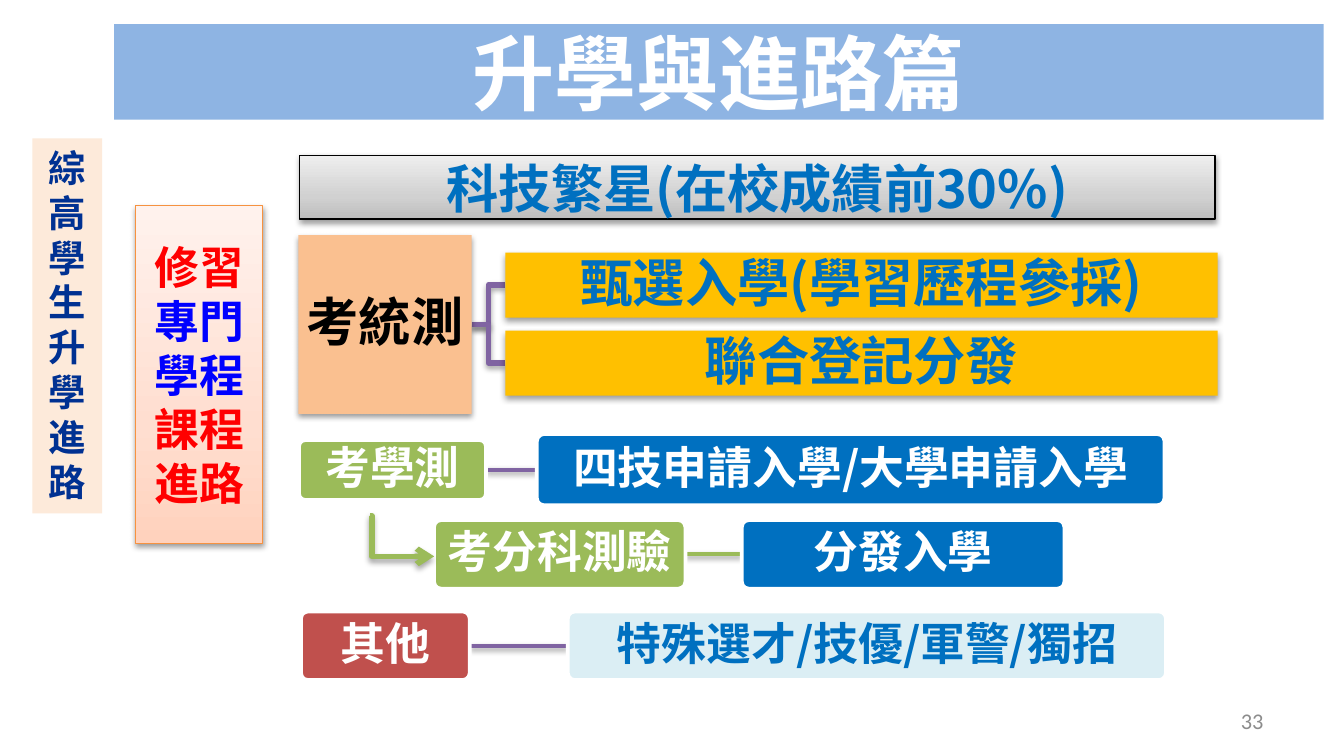
from dataclasses import dataclass

from lxml import etree
from pptx import Presentation
from pptx import util as u
from pptx.dml.color import RGBColor
from pptx.enum import shapes, text
from pptx.oxml import ns

EMU_PER_PX = 4572
FONT = "Noto Sans CJK SC"
C = {
    "white": "FFFFFF", "black": "000000", "title": "8EB4E3", "cream": "FDEADA",
    "navy": "003192", "red": "FF0000", "blue": "0000FF", "sky": "0070C0",
    "peach": "FAC090", "gold": "FFC000", "green": "9BBB59", "purple": "8064A2",
    "brick": "C0504D", "ice": "DBEEF4", "orange": "F69240", "grey": "8C8C8C",
}
PEACH_FADE = ("FFD2BD", "FFDED0", "FFF2ED")
GREY_FADE = ("BDBDBD", "D1D1D1", "EEEEEE")
FADE_STOPS = (0, 35, 100)


@dataclass(frozen=True)
class Box:
    x: int
    y: int
    w: int
    h: int
    fill: str | tuple[str, ...]
    runs: tuple[tuple[str, str], ...]
    size: int
    line: str | None = None
    line_pt: float = 0.75
    rounded: bool = False
    shadow: bool = False
    inset: tuple[int, int] = (4, 4)
    spacing: float | None = 0.9
    top: bool = False

    @property
    def mid(self) -> int:
        return self.y + self.h // 2


def px(n: int) -> int:
    return u.Emu(n * EMU_PER_PX)


def rgb(name: str) -> RGBColor:
    return RGBColor.from_string(C[name])


def sub(parent, tag: str, **attrs):
    return etree.SubElement(parent, ns.qn(tag), {k: str(v) for k, v in attrs.items()})


def add_shadow(spPr, alpha: int = 38, dist: float = 1.6) -> None:
    effects = spPr.find(ns.qn("a:effectLst"))
    if effects is None:
        effects = sub(spPr, "a:effectLst")
    outer = sub(effects, "a:outerShdw", blurRad=u.Pt(3.1), dist=u.Pt(dist),
                dir=5400000, rotWithShape=0)
    sub(sub(outer, "a:srgbClr", val=C["black"]), "a:alpha", val=alpha * 1000)


def add_fade(sp, colors: tuple[str, ...]) -> None:
    sp.fill.gradient()
    sp.fill.gradient_angle = 90
    stops = sp._element.spPr.find(".//" + ns.qn("a:gsLst"))
    for stop in list(stops):
        stops.remove(stop)
    for pos, color in zip(FADE_STOPS, colors):
        sub(sub(stops, "a:gs", pos=pos * 1000), "a:srgbClr", val=color)


def add_run(p, words: str, color: str, size: int, name: str, bold: bool) -> None:
    r = p.add_run()
    r.text = words
    r.font.size, r.font.bold, r.font.name = u.Pt(size), bold, name
    r.font.color.rgb = rgb(color)
    sub(r._r.get_or_add_rPr(), "a:ea", typeface=name)


def draw_box(s, box: Box) -> None:
    kind = shapes.MSO_SHAPE.ROUNDED_RECTANGLE if box.rounded else shapes.MSO_SHAPE.RECTANGLE
    sp = s.shapes.add_shape(kind, px(box.x), px(box.y), px(box.w), px(box.h))
    sp.shadow.inherit = False
    if box.rounded:
        sp.adjustments[0] = 0.1
    if isinstance(box.fill, tuple):
        add_fade(sp, box.fill)
    else:
        sp.fill.solid()
        sp.fill.fore_color.rgb = rgb(box.fill)
    if box.line:
        sp.line.color.rgb = rgb(box.line)
        sp.line.width = u.Pt(box.line_pt)
    else:
        sp.line.fill.background()
    if box.shadow:
        add_shadow(sp._element.spPr)
    tf = sp.text_frame
    tf.word_wrap = True
    tf.vertical_anchor = text.MSO_ANCHOR.TOP if box.top else text.MSO_ANCHOR.MIDDLE
    tf.margin_left = tf.margin_right = px(box.inset[0])
    tf.margin_top = tf.margin_bottom = px(box.inset[1])
    p = tf.paragraphs[0]
    p.alignment = text.PP_ALIGN.CENTER
    if box.spacing:
        p.line_spacing = box.spacing
    for words, color in box.runs:
        add_run(p, words, color, box.size, FONT, True)


def draw_line(s, start: tuple[int, int], end: tuple[int, int], color: str, width: int,
              bend: int | None = None, arrow: bool = False) -> None:
    kind = shapes.MSO_CONNECTOR.STRAIGHT if start[1] == end[1] else shapes.MSO_CONNECTOR.ELBOW
    cxn = s.shapes.add_connector(kind, *map(px, start + end))
    cxn.line.color.rgb = rgb(color)
    cxn.line.width = u.Pt(width)
    spPr = cxn._element.spPr
    if bend is not None:
        guides = spPr.find(".//" + ns.qn("a:avLst"))
        sub(guides, "a:gd", name="adj1", fmla=f"val {bend}")
    if arrow:
        sub(spPr.find(ns.qn("a:ln")), "a:tailEnd", type="arrow")
    add_shadow(spPr, *((35, 1.8) if width == 3 else (38, 1.6)))


def draw_link(s, a: Box, b: Box, color: str, width: int) -> None:
    draw_line(s, (a.x + a.w, a.mid), (b.x, b.mid), color, width)


def node(x: int, y: int, w: int, h: int, fill: str, words: str, color: str = "white") -> Box:
    return Box(x, y, w, h, fill, ((words, color),), 24, "white", 2, rounded=True)


def branch(y: int, words: str) -> Box:
    return Box(752, y, 1060, 97, "gold", ((words, "sky"),), 28, shadow=True)


def main() -> None:
    prs = Presentation()
    prs.slide_width, prs.slide_height = px(2000), px(1125)
    s = prs.slides.add_slide(prs.slide_layouts[6])

    panels = [
        Box(170, 36, 1800, 142, "title", (("升學與進路篇", "white"),), 44,
            inset=(20, 10), spacing=None),
        Box(48, 206, 104, 558, "cream", (("綜高學生升學進路", "navy"),), 20,
            inset=(20, 10), spacing=None, top=True),
        Box(202, 306, 189, 503, PEACH_FADE,
            (("修習", "red"), ("專門學程", "blue"), ("課程進路", "red")), 24,
            "orange", shadow=True, inset=(14, 8), spacing=None),
        Box(446, 231, 1362, 95, GREY_FADE, (("科技繁星(在校成績前30%)", "sky"),), 28,
            "black", shadow=True, inset=(14, 8), spacing=None),
    ]
    exam = Box(444, 350, 258, 266, "peach", (("考統測", "black"),), 28, shadow=True)
    branches = [branch(376, "甄選入學(學習歷程參採)"), branch(492, "聯合登記分發")]
    rows = [
        (node(445, 655, 278, 89, "green", "考學測"),
         node(799, 646, 934, 106, "sky", "四技申請入學/大學申請入學"), "purple"),
        (node(646, 774, 374, 102, "green", "考分科測驗"),
         node(1104, 774, 480, 102, "sky", "分發入學"), "green"),
        (node(448, 910, 251, 102, "brick", "其他"),
         node(845, 910, 890, 102, "ice", "特殊選才/技優/軍警/獨招", "sky"), "purple"),
    ]

    for panel in panels:
        draw_box(s, panel)
    for b in branches:
        draw_link(s, exam, b, "purple", 3)
    for box in [exam, *branches]:
        draw_box(s, box)
    for left, right, color in rows:
        draw_link(s, left, right, color, 2)
        draw_box(s, left)
        draw_box(s, right)
    draw_line(s, (551, 768), (646, 828), "green", 3, bend=2500, arrow=True)

    tb = s.shapes.add_textbox(px(1434), px(1043), px(466), px(60))
    tf = tb.text_frame
    tf.word_wrap = True
    tf.vertical_anchor = text.MSO_ANCHOR.MIDDLE
    p = tf.paragraphs[0]
    p.alignment = text.PP_ALIGN.RIGHT
    add_run(p, "33", "grey", 12, "Calibri", False)

    prs.save("out.pptx")


if __name__ == "__main__":
    main()
